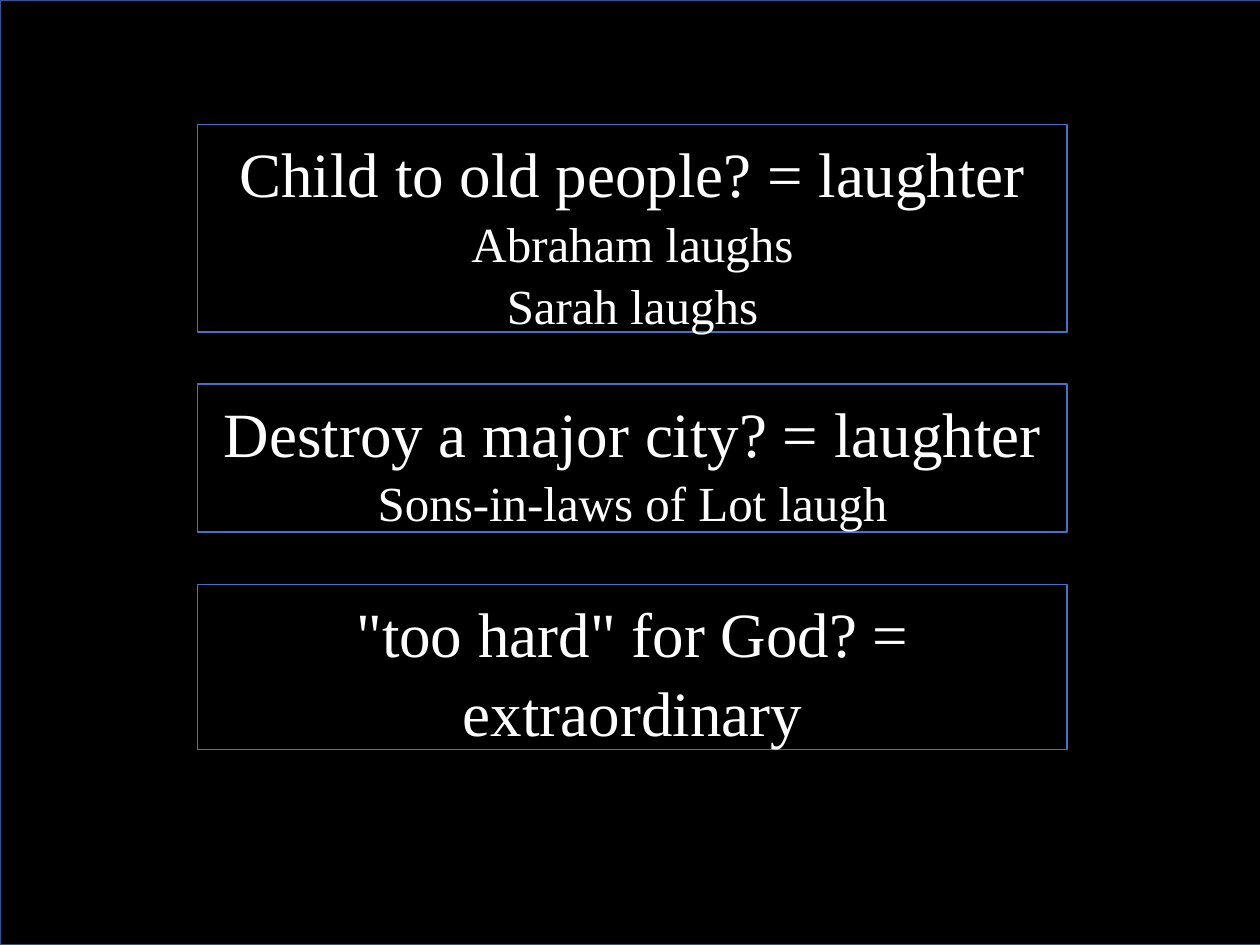
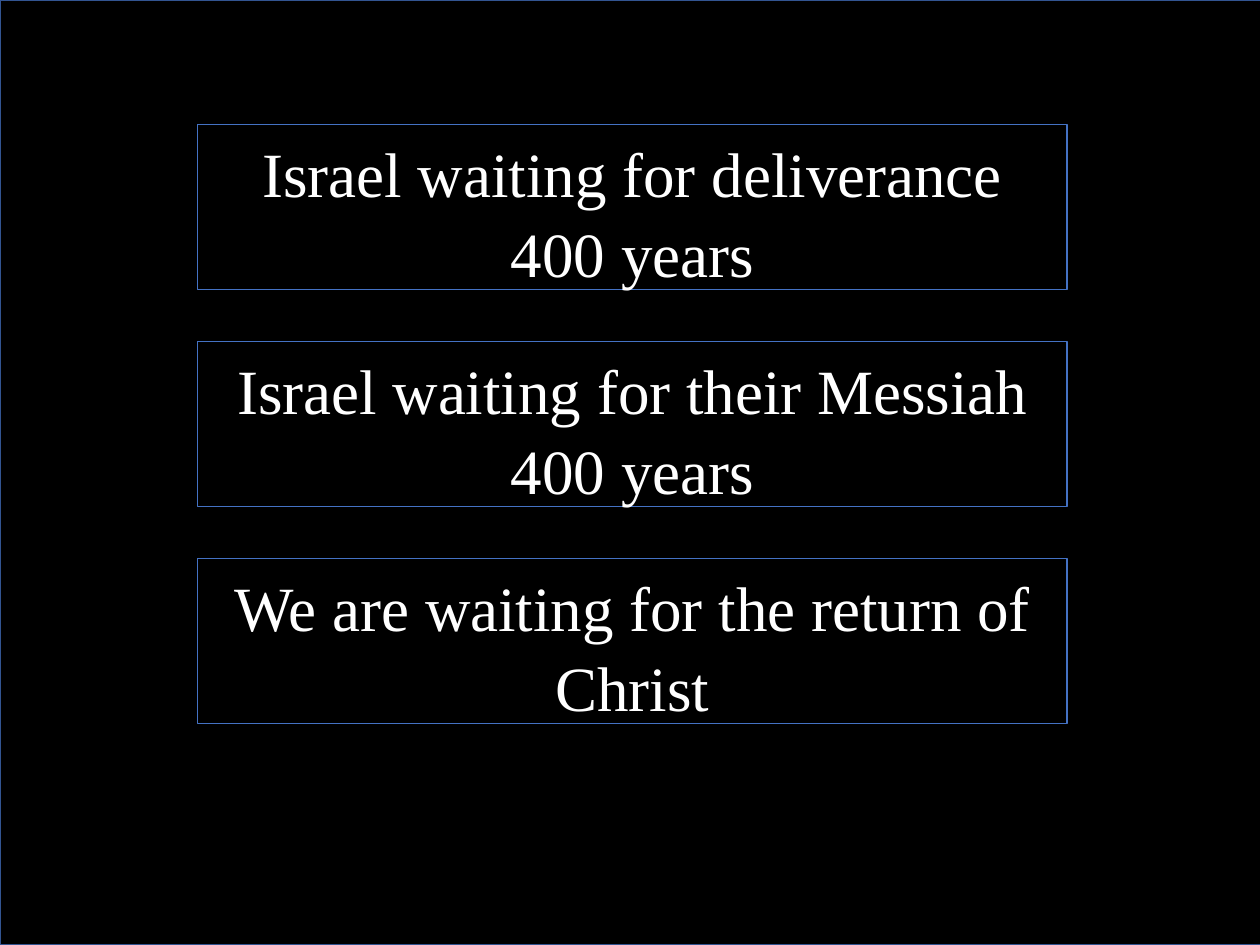
from dataclasses import dataclass

from pptx import Presentation
from pptx import util as u
from pptx.dml.color import RGBColor
from pptx.enum import shapes, text


@dataclass(frozen=True)
class Theme:
    font: str = "Times New Roman"
    backdrop: str = "000000"
    backdrop_line: str = "325491"
    panel_line: str = "4472C4"
    ink: str = "FFFFFF"
    head_pt: int = 36
    detail_pt: int = 28
    spacing: float = 1.05
    leading: float = 1.21  # line height as a share of the type size


@dataclass(frozen=True)
class Panel:
    head: str
    details: tuple[str, ...] = ()
    head_lines: int = 1

    def height(self) -> float:
        """Height in inches that fits the wrapped lines and both insets."""
        points = self.head_lines * THEME.head_pt + len(self.details) * THEME.detail_pt
        return points * THEME.leading / 72 + 2 * INSET


THEME = Theme()
WIDTH, HEIGHT = 10, 7.5
INSET = 0.05
PANEL_LEFT, PANEL_WIDTH = 0.157 * WIDTH, 0.69 * WIDTH
STACK_TOP, STACK_GAP = 0.132 * HEIGHT, 0.055 * HEIGHT

SLIDES = (
    (
        Panel("Child to old people? = laughter", ("Abraham laughs", "Sarah laughs")),
        Panel("Destroy a major city? = laughter", ("Sons-in-laws of Lot laugh",)),
        Panel('"too hard" for God? = extraordinary', head_lines=2),
    ),
    (
        Panel("Israel waiting for deliverance 400 years", head_lines=2),
        Panel("Israel waiting for their Messiah 400 years", head_lines=2),
        Panel("We are waiting for the return of Christ", head_lines=2),
    ),
)


def add_rect(s, left: float, top: float, width: float, height: float,
             line: str, line_pt: float, fill: str | None = None):
    sp = s.shapes.add_shape(shapes.MSO_SHAPE.RECTANGLE,
                            *(u.Inches(v) for v in (left, top, width, height)))
    sp.shadow.inherit = False
    if fill:
        sp.fill.solid()
        sp.fill.fore_color.rgb = RGBColor.from_string(fill)
    else:
        sp.fill.background()
    sp.line.color.rgb = RGBColor.from_string(line)
    sp.line.width = u.Pt(line_pt)
    return sp


def add_line(p, words: str, size: int) -> None:
    p.alignment = text.PP_ALIGN.CENTER
    p.line_spacing = THEME.spacing
    r = p.add_run()
    r.text = words
    r.font.name = THEME.font
    r.font.size = u.Pt(size)
    r.font.color.rgb = RGBColor.from_string(THEME.ink)


def add_panel(s, panel: Panel, top: float) -> None:
    sp = add_rect(s, PANEL_LEFT, top, PANEL_WIDTH, panel.height(), THEME.panel_line, 0.75)
    tf = sp.text_frame
    tf.word_wrap = True
    tf.auto_size = text.MSO_AUTO_SIZE.SHAPE_TO_FIT_TEXT
    tf.vertical_anchor = text.MSO_ANCHOR.TOP
    tf.margin_top = tf.margin_bottom = u.Inches(INSET)
    add_line(tf.paragraphs[0], panel.head, THEME.head_pt)
    for detail in panel.details:
        add_line(tf.add_paragraph(), detail, THEME.detail_pt)


def add_slide(prs, panels: tuple[Panel, ...]) -> None:
    s = prs.slides.add_slide(prs.slide_layouts[6])
    add_rect(s, 0, 0, 1.004 * WIDTH, HEIGHT, THEME.backdrop_line, 1, THEME.backdrop)
    top = STACK_TOP
    for panel in panels:
        add_panel(s, panel, top)
        top += panel.height() + STACK_GAP


def main() -> None:
    prs = Presentation()
    prs.slide_width, prs.slide_height = u.Inches(WIDTH), u.Inches(HEIGHT)
    for panels in SLIDES:
        add_slide(prs, panels)
    prs.save("out.pptx")


if __name__ == "__main__":
    main()
